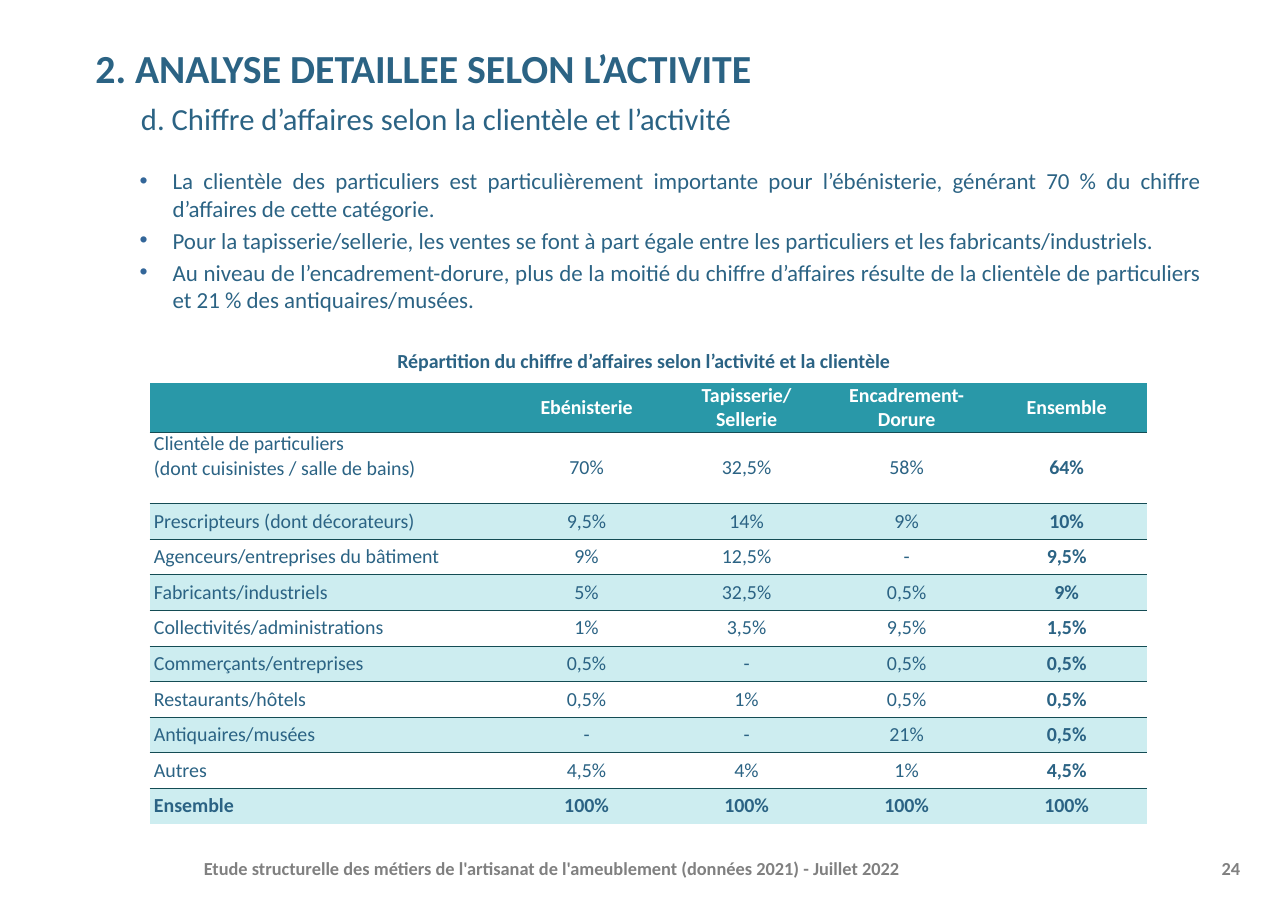
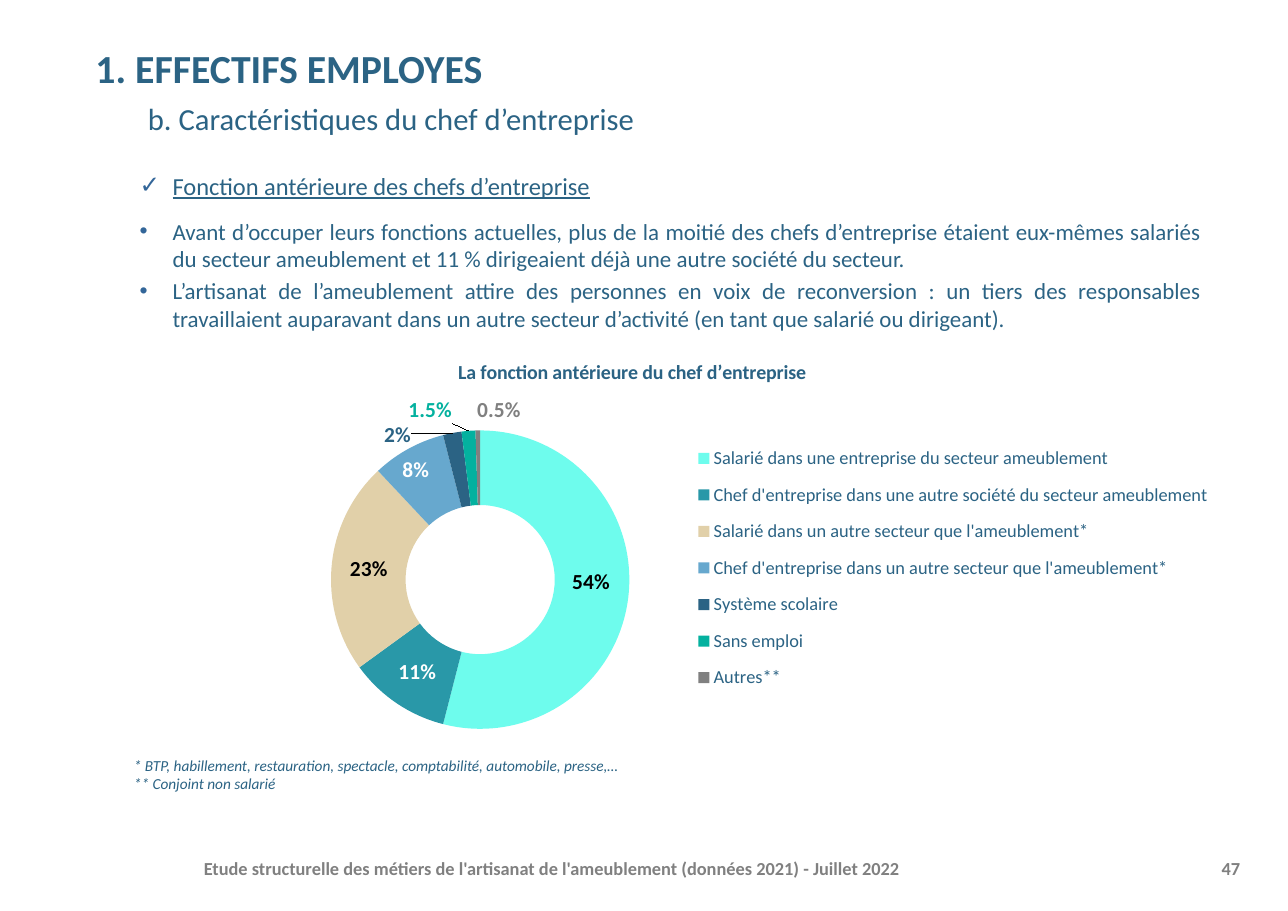
from dataclasses import dataclass
from typing import NamedTuple, Optional

from lxml import etree
from pptx import Presentation
from pptx.chart import data as cd
from pptx.dml.color import RGBColor
from pptx.enum import chart as ec, text as et
from pptx.oxml import ns
from pptx.util import Cm, Pt


@dataclass(frozen=True)
class Theme:
    font: str = "Calibri"
    ink: str = "2B6384"
    bullet: str = "336699"
    grey: str = "808080"
    teal: str = "2998A8"
    band: str = "CDEDF0"
    rule: str = "144C54"
    green: str = "04B19F"
    white: str = "FFFFFF"
    black: str = "000000"
    aqua: str = "6EFCED"
    sand: str = "E1D0A9"
    sky: str = "67A8CE"
    title: float = 26
    subtitle: float = 20
    check: float = 16
    body: float = 15
    label: float = 14
    table: float = 13
    small: float = 12
    note: float = 10


T = Theme()
FOOTER = "Etude structurelle des métiers de l'artisanat de l'ameublement (données 2021) - Juillet 2022"
NO_STYLE = "{2D5ABB26-0587-4C30-8999-92F81FD0307C}"
LEFT, CENTER, RIGHT, JUSTIFY = (
    et.PP_ALIGN.LEFT, et.PP_ALIGN.CENTER, et.PP_ALIGN.RIGHT, et.PP_ALIGN.JUSTIFY)
TOP, MIDDLE = et.MSO_ANCHOR.TOP, et.MSO_ANCHOR.MIDDLE


class Box(NamedTuple):
    left: float
    top: float
    width: float
    height: float

    def emu(self) -> list:
        return [Cm(v) for v in self]


class Point(NamedTuple):
    text: str
    mark: str = "•"
    size: float = T.body
    underline: bool = False
    before: float = 3


class Slice(NamedTuple):
    name: str
    value: float
    fill: str
    ink: str = T.white
    dx: float = 0
    dy: float = 0
    fmt: str = "0%"


HEADS = ("", "Ebénisterie", "Tapisserie/\nSellerie", "Encadrement-\nDorure", "Ensemble")
ROWS = (
    ("Clientèle de particuliers\n(dont cuisinistes / salle de bains)", "70%", "32,5%", "58%", "64%"),
    ("Prescripteurs (dont décorateurs)", "9,5%", "14%", "9%", "10%"),
    ("Agenceurs/entreprises du bâtiment", "9%", "12,5%", "-", "9,5%"),
    ("Fabricants/industriels", "5%", "32,5%", "0,5%", "9%"),
    ("Collectivités/administrations", "1%", "3,5%", "9,5%", "1,5%"),
    ("Commerçants/entreprises", "0,5%", "-", "0,5%", "0,5%"),
    ("Restaurants/hôtels", "0,5%", "1%", "0,5%", "0,5%"),
    ("Antiquaires/musées", "-", "-", "21%", "0,5%"),
    ("Autres", "4,5%", "4%", "1%", "4,5%"),
    ("Ensemble", "100%", "100%", "100%", "100%"),
)
SLICES = (
    Slice("Salarié dans une entreprise du secteur ameublement", 0.54, T.aqua, T.black, 0, -0.03),
    Slice("Chef d'entreprise dans une autre société du secteur ameublement", 0.11, T.teal),
    Slice("Salarié dans un autre secteur que l'ameublement*", 0.23, T.sand, T.black),
    Slice("Chef d'entreprise dans un autre secteur que l'ameublement*", 0.08, T.sky, T.white, -0.01, -0.03),
    Slice("Système scolaire", 0.02, T.ink, T.ink, -0.06, -0.09),
    Slice("Sans emploi", 0.015, T.green, T.green, -0.04, -0.15, "0.0%"),
    Slice("Autres**", 0.005, T.grey, T.grey, 0.02, -0.15, "0.0%"),
)


def rgb(color: str) -> RGBColor:
    return RGBColor.from_string(color)


def sub(parent, tag: str, **attrs):
    el = etree.SubElement(parent, ns.qn(tag))
    for key, value in attrs.items():
        el.set(key, str(value))
    return el


def style(font, size: float, color: str, bold: bool = False,
          italic: bool = False, underline: bool = False) -> None:
    font.name, font.size, font.color.rgb = T.font, Pt(size), rgb(color)
    font.bold, font.italic, font.underline = bold, italic, underline


def write(tf, text: str, *, size: float, color: str = T.ink, align=LEFT,
          before: float = 0, indent: float = 0, hang: float = 0,
          mark: Optional[str] = None, **look) -> None:
    for line in text.split("\n"):
        p = tf.paragraphs[0]
        if p.runs:
            p = tf.add_paragraph()
            p.space_before = Pt(before)
        else:
            p.space_before = Pt(0)
        p.alignment = align
        pr = p._p.get_or_add_pPr()
        pr.set("marL", str(Cm(indent)))
        pr.set("indent", str(Cm(-hang)))
        if mark:
            sub(sub(pr, "a:buClr"), "a:srgbClr", val=T.bullet)
            sub(pr, "a:buFont", typeface="Arial")
            sub(pr, "a:buChar", char=mark)
        r = p.add_run()
        r.text = line
        style(r.font, size, color, **look)


def frame(tf, anchor=TOP, x: float = 0.25, y: float = 0.13) -> None:
    tf.word_wrap = True
    tf.auto_size = et.MSO_AUTO_SIZE.NONE
    tf.vertical_anchor = anchor
    tf.margin_left = tf.margin_right = Cm(x)
    tf.margin_top = tf.margin_bottom = Cm(y)


def text_box(s, box: Box, text: str, *, anchor=TOP, **fmt) -> None:
    tf = s.shapes.add_textbox(*box.emu()).text_frame
    frame(tf, anchor)
    write(tf, text, **fmt)


def base_slide(prs, title: str, subtitle: str, number: str, indent: float):
    s = prs.slides.add_slide(prs.slide_layouts[5])
    sp = s.shapes.title
    sp.left, sp.top, sp.width, sp.height = Box(2, 1, 25.7, 2).emu()
    tf = sp.text_frame
    frame(tf, x=0, y=0)
    write(tf, title, size=T.title, bold=True, indent=0.2)
    write(tf, subtitle, size=T.subtitle, before=6, indent=indent)
    footer = dict(anchor=MIDDLE, size=T.small, color=T.grey, bold=True)
    text_box(s, Box(4.45, 19.46, 22.4, 1.12), FOOTER, **footer)
    text_box(s, Box(26.87, 19.46, 1.98, 1.12), number, align=RIGHT, **footer)
    return s


def bullets(s, top: float, points: list) -> None:
    tf = s.shapes.add_textbox(*Box(2, top, 25.7, 4.2).emu()).text_frame
    frame(tf, x=0)
    for pt in points:
        write(tf, pt.text, size=pt.size, align=JUSTIFY, before=pt.before,
              indent=1.98, hang=0.76, mark=pt.mark, underline=pt.underline)


def rule(cell, tag: str, width: float) -> None:
    ln = sub(cell._tc.get_or_add_tcPr(), tag, w=Pt(width))
    sub(sub(ln, "a:solidFill"), "a:srgbClr", val=T.rule)


def revenue_table(s) -> None:
    heights = [1.14, 1.65] + [0.82] * 9
    widths = [8.23] + [3.69] * 4
    last = len(ROWS)
    table = s.shapes.add_table(
        last + 1, len(HEADS), *Box(3.45, 8.82, sum(widths), sum(heights)).emu()).table
    table.first_row = table.horz_banding = False
    table._tbl.tblPr.find(ns.qn("a:tableStyleId")).text = NO_STYLE
    for col, width in zip(table.columns, widths):
        col.width = Cm(width)
    for i, (values, height) in enumerate(zip((HEADS, *ROWS), heights)):
        table.rows[i].height = Cm(height)
        for j, value in enumerate(values):
            cell = table.cell(i, j)
            cell.margin_left = cell.margin_right = Cm(0.13 if j else 0.1)
            cell.margin_top = cell.margin_bottom = 0
            cell.vertical_anchor = TOP if (i, j) == (1, 0) else MIDDLE
            if i:
                rule(cell, "a:lnT", 1 if i == last else 0.5)
            if i < last:
                rule(cell, "a:lnB", 1 if i == last - 1 else 0.5)
            if i == 0 or i % 2 == 0:
                cell.fill.solid()
                cell.fill.fore_color.rgb = rgb(T.band if i else T.teal)
            else:
                cell.fill.background()
            if value:
                write(cell.text_frame, value, size=T.table,
                      color=T.ink if i else T.white, align=CENTER if j else LEFT,
                      bold=i in (0, last) or j == len(HEADS) - 1)


def place(parent, index: int, edge: bool = True, inner: bool = False, **pos: float) -> None:
    for old in parent.findall(ns.qn("c:layout")):
        parent.remove(old)
    layout = etree.Element(ns.qn("c:layout"))
    manual = sub(layout, "c:manualLayout")
    if inner:
        sub(manual, "c:layoutTarget", val="inner")
    if edge:
        sub(manual, "c:xMode", val="edge")
        sub(manual, "c:yMode", val="edge")
    for key, value in pos.items():
        sub(manual, f"c:{key}", val=value)
    parent.insert(index, layout)


def origin_chart(s) -> None:
    data = cd.CategoryChartData(number_format="0%")
    data.categories = [sl.name for sl in SLICES]
    data.add_series("Fonction antérieure", [sl.value for sl in SLICES])
    chart = s.shapes.add_chart(
        ec.XL_CHART_TYPE.DOUGHNUT, *Box(4.55, 8.1, 23.72, 8.92).emu(), data).chart
    style(chart.font, T.note, T.black)

    chart.has_title = True
    write(chart.chart_title.text_frame, "La fonction antérieure du chef d’entreprise",
          size=T.table, bold=True, align=CENTER)
    place(chart.chart_title._element, 1, x=0.25, y=0.01)

    chart.has_legend = True
    chart.legend.position = ec.XL_LEGEND_POSITION.RIGHT
    chart.legend.include_in_layout = False
    style(chart.legend.font, T.small, T.ink)
    place(chart.legend._element, 1, x=0.48, y=0.21, w=0.51, h=0.7)

    plot = chart.plots[0]
    plot.vary_by_categories = True
    ser = plot.series[0]
    place(ser._element.getparent().getparent(), 0, inner=True, x=0.13, y=0.19, w=0.29, h=0.8)
    labels = ser.data_labels
    labels.show_value = True
    labels.number_format, labels.number_format_is_linked = "0%", False
    style(labels.font, T.label, T.white, bold=True)
    for i, sl in enumerate(SLICES):
        point = ser.points[i]
        point.format.fill.solid()
        point.format.fill.fore_color.rgb = rgb(sl.fill)
        point.format.line.fill.background()
        style(point.data_label.font, T.label, sl.ink, bold=True)
        label = ser._element.xpath(f"c:dLbls/c:dLbl[c:idx/@val='{i}']")[0]
        fmt = etree.Element(ns.qn("c:numFmt"), formatCode=sl.fmt, sourceLinked="0")
        label.insert(1, fmt)
        if sl.dx or sl.dy:
            place(label, 1, edge=False, x=sl.dx, y=sl.dy)


def main() -> None:
    prs = Presentation()
    prs.slide_width, prs.slide_height = Cm(29.7), Cm(21)

    s = base_slide(prs, "2. ANALYSE DETAILLEE SELON L’ACTIVITE",
                   "d. Chiffre d’affaires selon la clientèle et l’activité", "24", 1.25)
    bullets(s, 3.71, [
        Point("La clientèle des particuliers est particulièrement importante pour l’ébénisterie, générant 70 % du chiffre d’affaires de cette catégorie."),
        Point("Pour la tapisserie/sellerie, les ventes se font à part égale entre les particuliers et les fabricants/industriels."),
        Point("Au niveau de l’encadrement-dorure, plus de la moitié du chiffre d’affaires résulte de la clientèle de particuliers et 21 % des antiquaires/musées."),
    ])
    text_box(s, Box(7.59, 7.9, 14.5, 0.81),
             "Répartition du chiffre d’affaires selon l’activité et la clientèle",
             anchor=MIDDLE, size=T.table, bold=True, align=CENTER)
    revenue_table(s)

    s = base_slide(prs, "1. EFFECTIFS EMPLOYES",
                   "b. Caractéristiques du chef d’entreprise", "47", 1.41)
    bullets(s, 3.81, [
        Point("Fonction antérieure des chefs d’entreprise", "✓", T.check, True),
        Point("Avant d’occuper leurs fonctions actuelles, plus de la moitié des chefs d’entreprise étaient eux-mêmes salariés du secteur ameublement et 11 % dirigeaient déjà une autre société du secteur.", before=11),
        Point("L’artisanat de l’ameublement attire des personnes en voix de reconversion : un tiers des responsables travaillaient auparavant dans un autre secteur d’activité (en tant que salarié ou dirigeant)."),
    ])
    origin_chart(s)
    text_box(s, Box(2.84, 17.3, 12.8, 1.12),
             "* BTP, habillement, restauration, spectacle, comptabilité, automobile, presse,…\n"
             "** Conjoint non salarié", size=T.note, italic=True)

    prs.save("out.pptx")


if __name__ == "__main__":
    main()
